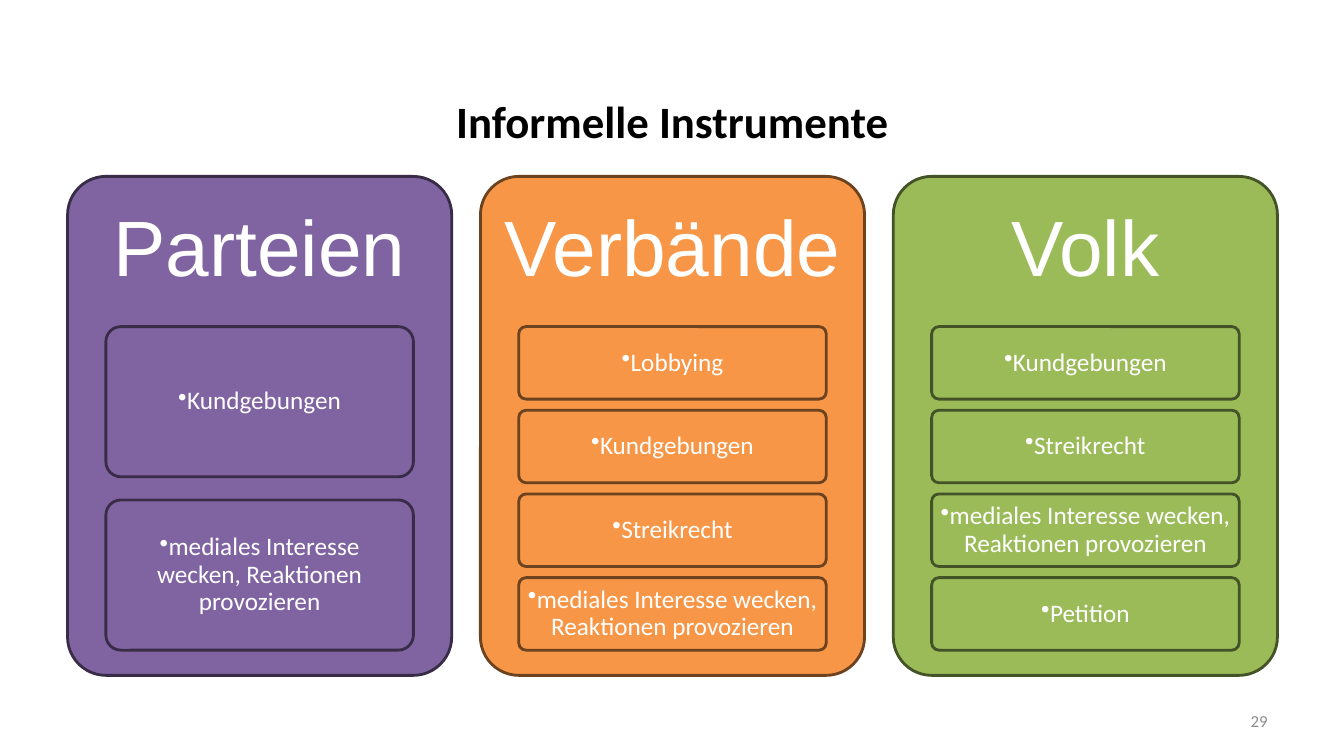
from dataclasses import dataclass

from pptx import Presentation
from pptx import util as u
from pptx.dml import color
from pptx.enum import shapes, text
from pptx.oxml.ns import qn


@dataclass(frozen=True)
class Theme:
    black: str = "000000"
    white: str = "FFFFFF"
    grey: str = "8C8C8C"
    body_font: str = "Calibri"
    heading_font: str = "Arial"
    title_size: float = 32
    heading_size: float = 56
    item_size: float = 18
    number_size: float = 12
    line_width: float = 2


@dataclass(frozen=True)
class Area:
    left: float
    top: float
    width: float
    height: float

    def shrink(self, margin: float) -> "Area":
        return Area(self.left + margin, self.top + margin,
                    self.width - 2 * margin, self.height - 2 * margin)

    def lengths(self) -> list[u.Length]:
        return [u.Inches(v) for v in (self.left, self.top, self.width, self.height)]


@dataclass(frozen=True)
class Style:
    size: float
    color: str
    font: str = Theme.body_font
    bold: bool = False
    align: text.PP_ALIGN = text.PP_ALIGN.CENTER
    insets: tuple[float, float] = (0.1, 0.05)
    tight: bool = False
    bullet: bool = False


@dataclass(frozen=True)
class Column:
    heading: str
    fill: str
    line: str
    items: tuple[str, ...]


THEME = Theme()
TITLE = Style(THEME.title_size, THEME.black, bold=True)
NUMBER = Style(THEME.number_size, THEME.grey, align=text.PP_ALIGN.RIGHT)
HEADING = Style(THEME.heading_size, THEME.white, THEME.heading_font,
                insets=(0.23, 0.23), tight=True)
ITEM = Style(THEME.item_size, THEME.white, insets=(0.05, 0.04), tight=True, bullet=True)

MEDIA = "mediales Interesse wecken, Reaktionen provozieren"
COLUMNS = (
    Column("Parteien", "8064A2", "382C47", ("Kundgebungen", MEDIA)),
    Column("Verbände", "F79646", "6C421F",
           ("Lobbying", "Kundgebungen", "Streikrecht", MEDIA)),
    Column("Volk", "9BBB59", "445227",
           ("Kundgebungen", "Streikrecht", MEDIA, "Petition")),
)

FIRST_PANEL = Area(0.67, 1.75, 3.81, 4.95)
COLUMN_STEP = 4.095
HEADING_HEIGHT = 1.48
ITEMS_TOP, ITEMS_HEIGHT = 3.24, 3.21
ITEM_MARGIN = 0.38
GAP_RATIO = 0.154  # gap between items, relative to item height
CORNER = 0.1
CORNER_INSET = 0.29 * CORNER  # text inset that clears the rounded corner


def add_text(parent, area: Area, words: str, style: Style) -> None:
    box = parent.add_textbox(*area.lengths())
    frame = box.text_frame
    frame.word_wrap = True
    frame.vertical_anchor = text.MSO_ANCHOR.MIDDLE
    frame.margin_left = frame.margin_right = u.Inches(style.insets[0])
    frame.margin_top = frame.margin_bottom = u.Inches(style.insets[1])
    para = frame.paragraphs[0]
    para.alignment = style.align
    if style.tight:
        para.line_spacing = 0.9
        para.space_after = u.Pt(0.35 * style.size)
    if style.bullet:
        settings = para._p.get_or_add_pPr()
        settings.set("marL", "0")
        settings.set("indent", "0")
        mark = settings.makeelement(qn("a:buChar"), {"char": "•"})
        settings.append(mark)
    span = para.add_run()
    span.text = words
    span.font.name = style.font
    span.font.size = u.Pt(style.size)
    span.font.bold = style.bold
    span.font.color.rgb = color.RGBColor.from_string(style.color)


def add_panel(parent, area: Area, column: Column) -> None:
    panel = parent.add_shape(shapes.MSO_SHAPE.ROUNDED_RECTANGLE, *area.lengths())
    panel.adjustments[0] = CORNER
    panel.shadow.inherit = False
    panel.fill.solid()
    panel.fill.fore_color.rgb = color.RGBColor.from_string(column.fill)
    panel.line.color.rgb = color.RGBColor.from_string(column.line)
    panel.line.width = u.Pt(THEME.line_width)


def add_column(parent, area: Area, column: Column) -> None:
    # Panel and heading
    add_panel(parent, area, column)
    add_text(parent, Area(area.left, area.top, area.width, HEADING_HEIGHT),
             column.heading, HEADING)
    # Items share the remaining height
    count = len(column.items)
    height = ITEMS_HEIGHT / (count + (count - 1) * GAP_RATIO)
    for row, words in enumerate(column.items):
        item = Area(area.left + ITEM_MARGIN, ITEMS_TOP + row * height * (1 + GAP_RATIO),
                    area.width - 2 * ITEM_MARGIN, height)
        add_panel(parent, item, column)
        add_text(parent, item.shrink(CORNER_INSET * height), words, ITEM)


def main() -> None:
    deck = Presentation()
    deck.slide_width, deck.slide_height = u.Inches(13.33), u.Inches(7.5)
    page = deck.slides.add_slide(deck.slide_layouts[6])

    # Title and page number
    add_text(page.shapes, Area(0.67, 0.84, 12, 0.71), "Informelle Instrumente", TITLE)
    add_text(page.shapes, Area(9.56, 6.95, 3.11, 0.4), "29", NUMBER)

    # Three columns in one diagram
    diagram = page.shapes.add_group_shape()
    for index, column in enumerate(COLUMNS):
        area = Area(FIRST_PANEL.left + index * COLUMN_STEP, FIRST_PANEL.top,
                    FIRST_PANEL.width, FIRST_PANEL.height)
        add_column(diagram.shapes, area, column)

    deck.save("out.pptx")


if __name__ == "__main__":
    main()
